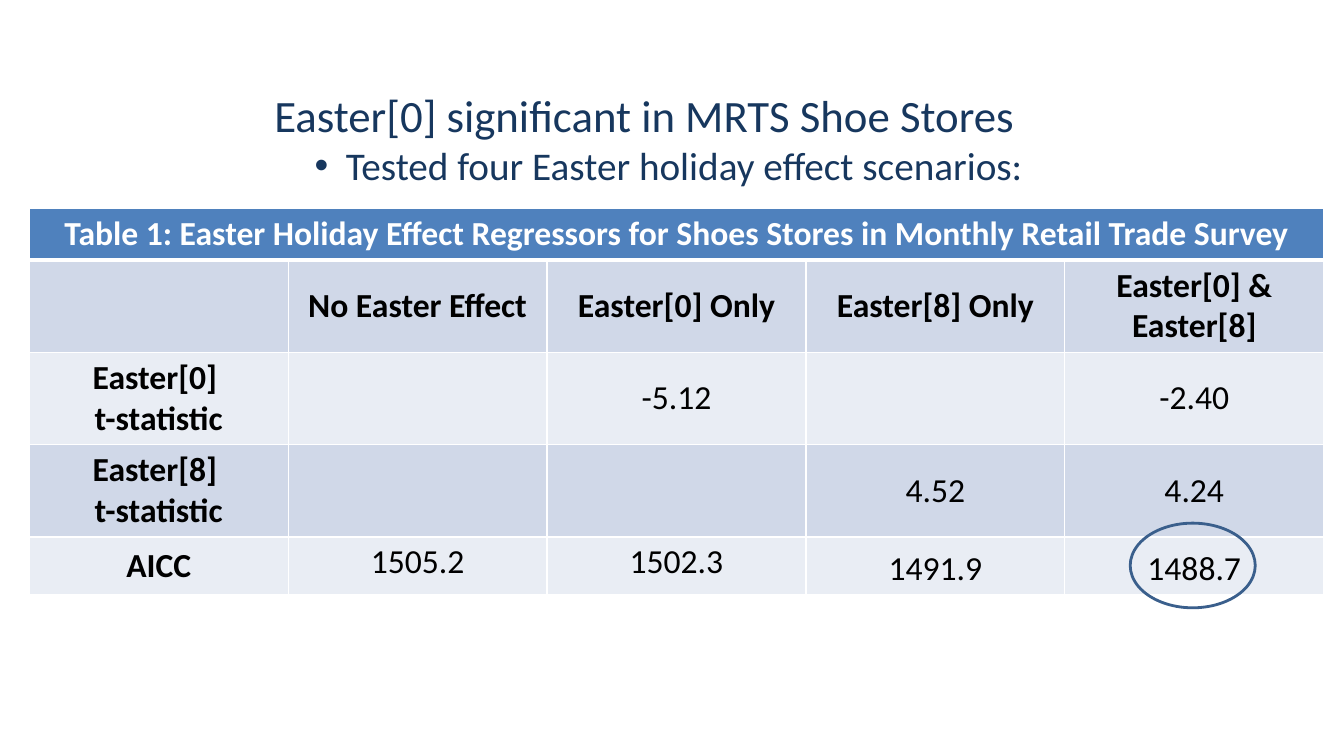
from dataclasses import dataclass

from lxml import etree
from pptx import Presentation
from pptx import util as u
from pptx.dml.color import RGBColor
from pptx.enum import shapes, text
from pptx.oxml.ns import qn

FONT = "Calibri"
NAVY, BLUE, RING = "17375E", "4F81BD", "3A5F8C"
BLACK, WHITE = "000000", "FFFFFF"
BANDS = ("D0D8E8", "E9EDF4")
MID, TOP = text.MSO_ANCHOR.MIDDLE, text.MSO_ANCHOR.TOP


@dataclass
class Cell:
    words: str = ""
    bold: bool = False
    anchor: text.MSO_ANCHOR = MID
    space: float = 1.0
    color: str = BLACK
    fill: str = WHITE


def rgb(code: str) -> RGBColor:
    return RGBColor.from_string(code)


def style(font, color: str, **form) -> None:
    font.color.rgb = rgb(color)
    for key, val in {"name": FONT, **form}.items():
        setattr(font, key, val)


def edge(cell, side: str, width: float) -> None:
    line = etree.SubElement(cell._tc.get_or_add_tcPr(), qn(f"a:ln{side}"),
                            w=str(u.Pt(width)))
    fill = etree.SubElement(line, qn("a:solidFill"))
    etree.SubElement(fill, qn("a:srgbClr"), val=WHITE)


def write(cell, item: Cell, row: int) -> None:
    for side in "LRTB":
        thick = (row, side) in ((0, "B"), (1, "T"))
        edge(cell, side, 3 if thick else 1)
    cell.fill.solid()
    cell.fill.fore_color.rgb = rgb(item.fill)
    cell.vertical_anchor = item.anchor
    cell.text = item.words
    for para in cell.text_frame.paragraphs:
        para.alignment = text.PP_ALIGN.CENTER
        para.line_spacing = item.space
        style(para.font, item.color, size=u.Pt(24), bold=item.bold)


def indent(para, left: float, hang: float = 0, mark: str = "") -> None:
    props = para._p.get_or_add_pPr()
    props.set("marL", str(u.Inches(left)))
    props.set("indent", str(u.Inches(hang)))
    if mark:
        etree.SubElement(props, qn("a:buFont"), typeface="Arial")
        etree.SubElement(props, qn("a:buChar"), char=mark)


def place(shape, left: float, top: float, width: float, height: float) -> None:
    spots = {"left": left, "top": top, "width": width, "height": height}
    for key, val in spots.items():
        setattr(shape, key, u.Inches(val))


def head(slide) -> None:
    title = slide.shapes.title
    place(title, 2.52, 0.82, 7.81, 1.41)
    frame = title.text_frame
    frame.text = ("Easter[0] significant in MRTS Shoe Stores\n"
                  "Tested four Easter holiday effect scenarios:")
    form = {"word_wrap": False, "auto_size": text.MSO_AUTO_SIZE.NONE,
            "vertical_anchor": TOP}
    for key, val in form.items():
        setattr(frame, key, val)
    main, point = frame.paragraphs
    indent(main, 0.1)
    indent(point, 0.81, -0.31, "•")
    for para, size in ((main, 32), (point, 28)):
        para.alignment = text.PP_ALIGN.LEFT
        style(para.font, NAVY, size=u.Pt(size))


def grid(slide, rows: list[list[Cell]], highs: list[float]) -> None:
    cols = len(rows[-1])
    table = slide.shapes.add_table(
        len(rows), cols, u.Inches(0.29), u.Inches(2.07),
        u.Inches(12.84), u.Inches(sum(highs))).table
    table.first_row = table.horz_banding = False
    for row, (items, high) in enumerate(zip(rows, highs)):
        table.rows[row].height = u.Inches(high)
        for col, item in enumerate(items):
            if row:
                item.fill = BANDS[(row - 1) % 2]
            write(table.cell(row, col), item, row)
    table.cell(0, 0).merge(table.cell(0, cols - 1))


def ring(slide) -> None:
    oval = slide.shapes.add_shape(shapes.MSO_SHAPE.OVAL, 0, 0, 0, 0)
    place(oval, 11.21, 5.19, 1.24, 0.84)
    oval.shadow.inherit = False
    oval.fill.background()
    oval.line.color.rgb = rgb(RING)
    oval.line.width = u.Pt(2)


def main() -> None:
    deck = Presentation()
    deck.slide_width, deck.slide_height = u.Inches(13.33), u.Inches(7.5)
    slide = deck.slides.add_slide(deck.slide_layouts[5])

    # Title and lead-in
    head(slide)

    # Table of regressors
    name = ("Table 1: Easter Holiday Effect Regressors for Shoes Stores "
            "in Monthly Retail Trade Survey")
    rows = [
        [Cell(name, True, TOP, color=WHITE, fill=BLUE)],
        [Cell(), Cell("No Easter Effect", True), Cell("Easter[0] Only", True),
         Cell("Easter[8] Only", True), Cell("Easter[0] & Easter[8]", True, TOP)],
        [Cell("Easter[0] \nt-statistic", True), Cell(), Cell("-5.12"),
         Cell(), Cell("-2.40")],
        [Cell("Easter[8] \nt-statistic", True), Cell(), Cell(),
         Cell("4.52"), Cell("4.24")],
        [Cell("AICC", True), Cell("1505.2", anchor=TOP),
         Cell("1502.3", anchor=TOP), Cell("1491.9", anchor=TOP, space=1.15),
         Cell("1488.7", anchor=TOP, space=1.15)],
    ]
    grid(slide, rows, [0.51, 0.91, 0.92, 0.91, 0.56])

    # Ring around the lowest AICC
    ring(slide)

    deck.save("out.pptx")


if __name__ == "__main__":
    main()
